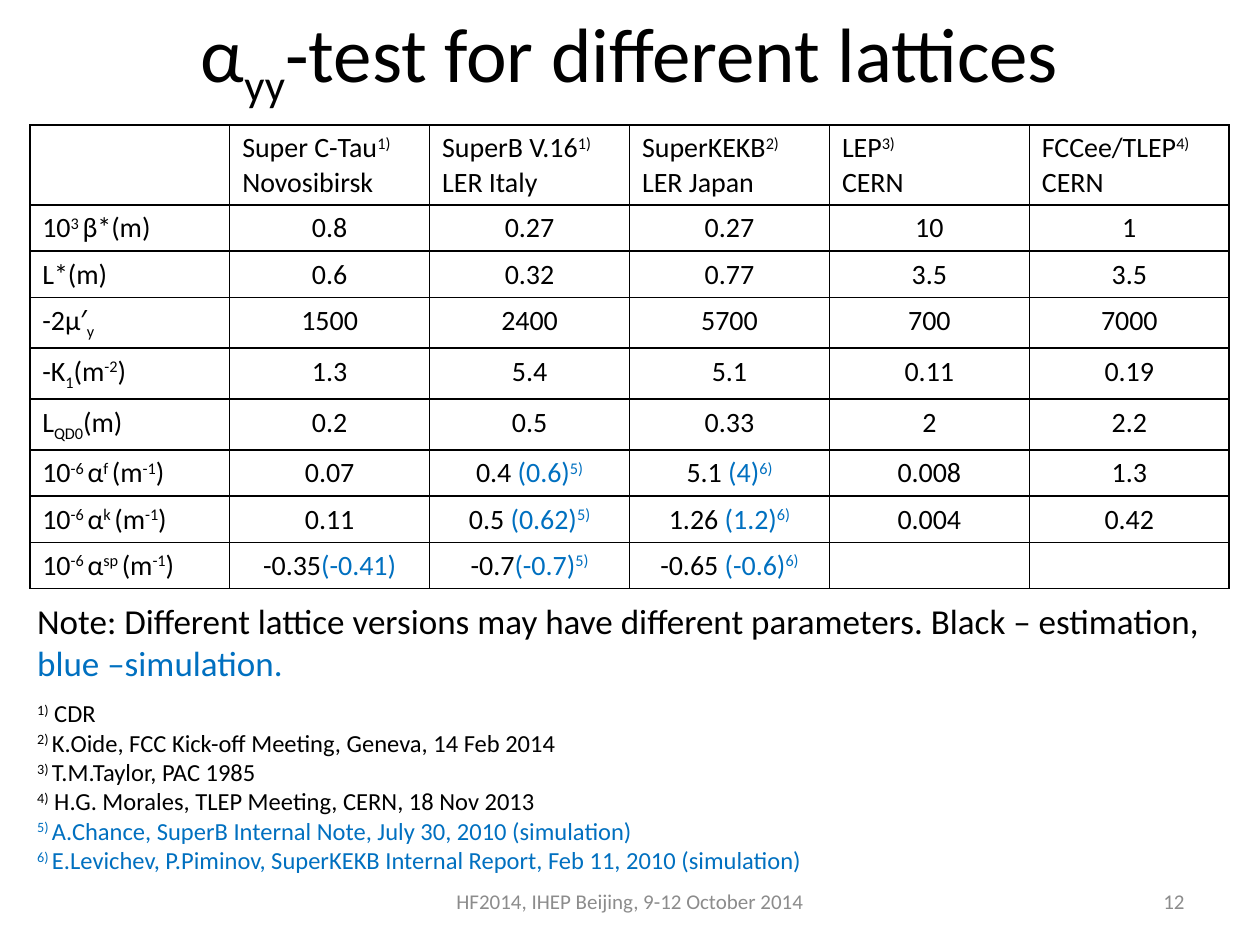
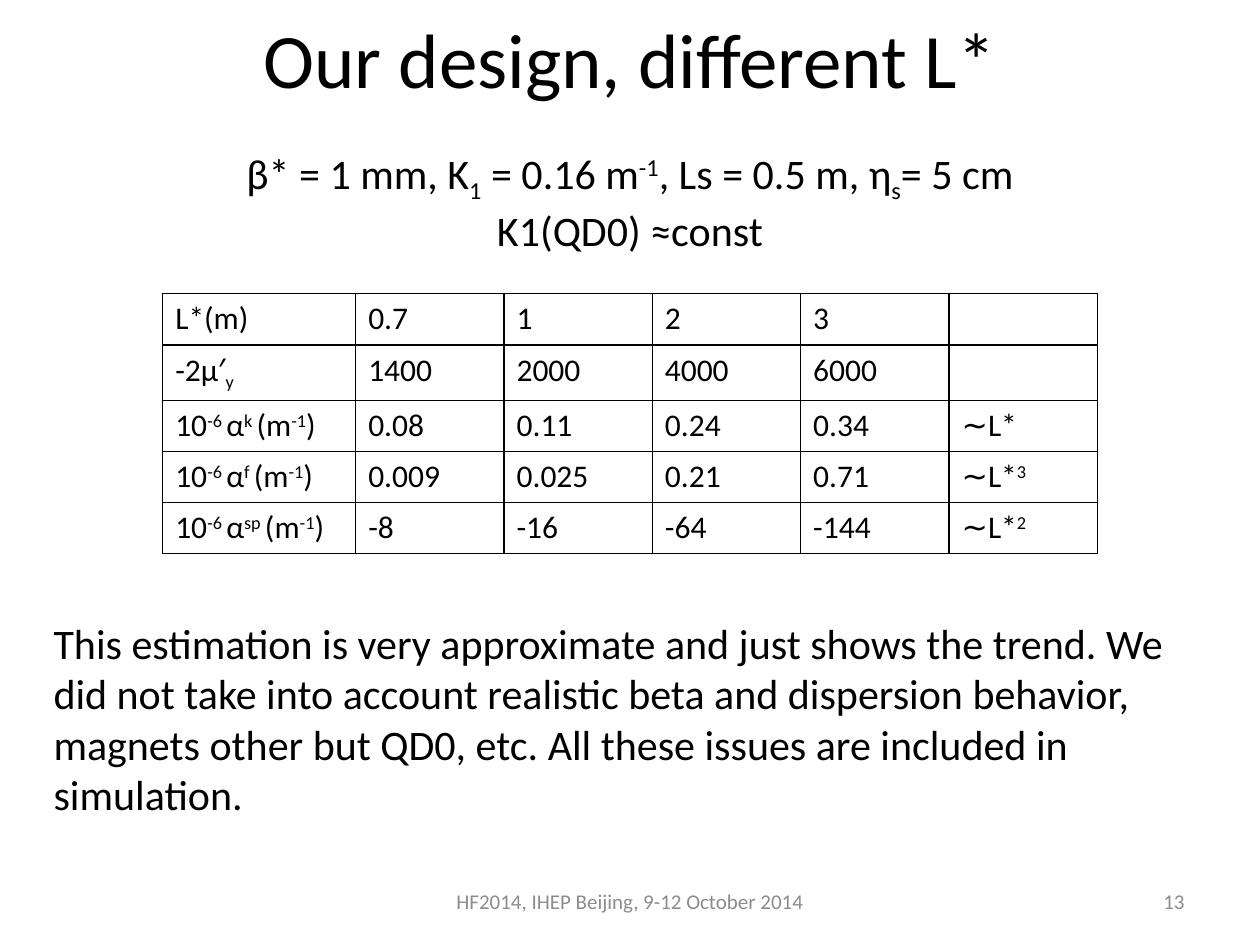
from dataclasses import dataclass

from lxml import etree
from pptx import Presentation
from pptx.dml.color import RGBColor
from pptx.enum import text
from pptx.oxml import ns
from pptx.slide import Slide
from pptx.text.text import TextFrame, _Paragraph
from pptx.util import Cm, Pt

LEFT, CENTER, RIGHT = text.PP_ALIGN.LEFT, text.PP_ALIGN.CENTER, text.PP_ALIGN.RIGHT
BASELINES = {"^": "30000", "_": "-25000"}


@dataclass(frozen=True)
class Theme:
    font: str = "Calibri"
    ink: RGBColor = RGBColor(0x00, 0x00, 0x00)
    simulation: RGBColor = RGBColor(0x00, 0x70, 0xC0)
    muted: RGBColor = RGBColor(0x8C, 0x8C, 0x8C)
    title: int = 44
    body: int = 24
    note: int = 20
    wide_cell: int = 18
    cell: int = 16
    reference: int = 14
    footer: int = 12
    border: float = 1


THEME = Theme()


@dataclass(frozen=True)
class TextBlock:
    left: float
    top: float
    width: float
    height: float
    size: int
    lines: tuple[str, ...]
    align: text.PP_ALIGN = LEFT
    color: RGBColor = THEME.ink
    anchor: text.MSO_ANCHOR = text.MSO_ANCHOR.TOP


@dataclass(frozen=True)
class Grid:
    left: float
    top: float
    widths: tuple[float, ...]
    heights: tuple[float, ...]
    size: int
    value_align: text.PP_ALIGN
    rows: tuple[tuple[str, ...], ...]


@dataclass(frozen=True)
class PageContent:
    number: int
    title: str
    blocks: tuple[TextBlock, ...]
    grid: Grid


def add_spans(para: _Paragraph, markup: str, color: RGBColor) -> None:
    """Add runs: {^up} and {_down} shift the baseline."""
    for piece in markup.split("}"):
        plain, _, shifted = piece.partition("{")
        for words, baseline in ((plain, None), (shifted[1:], BASELINES.get(shifted[:1]))):
            if words:
                span = para.add_run()
                span.text = words
                span.font.color.rgb = color
                if baseline:
                    span._r.get_or_add_rPr().set("baseline", baseline)


def write_lines(frame: TextFrame, lines: tuple[str, ...], size: int,
                align: text.PP_ALIGN, color: RGBColor = THEME.ink) -> None:
    """Write one paragraph per line; text after § is a simulation result."""
    for index, line in enumerate(lines):
        para = frame.paragraphs[0] if index == 0 else frame.add_paragraph()
        para.alignment = align
        para.font.name, para.font.size = THEME.font, Pt(size)
        estimate, _, simulated = line.partition("§")
        add_spans(para, estimate, color)
        add_spans(para, simulated, THEME.simulation)
        if not line:
            etree.SubElement(para._p, ns.qn("a:endParaRPr"), sz=str(size * 100))


def add_text(page: Slide, block: TextBlock) -> None:
    box = page.shapes.add_textbox(Cm(block.left), Cm(block.top), Cm(block.width), Cm(block.height))
    frame = box.text_frame
    frame.word_wrap = True
    frame.vertical_anchor = block.anchor
    write_lines(frame, block.lines, block.size, block.align, block.color)


def add_borders(cell) -> None:
    props = cell._tc.get_or_add_tcPr()
    for position, side in enumerate(("a:lnL", "a:lnR", "a:lnT", "a:lnB")):
        line = etree.Element(ns.qn(side), w=str(Pt(THEME.border)))
        fill = etree.SubElement(line, ns.qn("a:solidFill"))
        etree.SubElement(fill, ns.qn("a:srgbClr"), val=str(THEME.ink))
        props.insert(position, line)


def add_grid(page: Slide, grid: Grid) -> None:
    table = page.shapes.add_table(
        len(grid.heights), len(grid.widths), Cm(grid.left), Cm(grid.top),
        Cm(sum(grid.widths)), Cm(sum(grid.heights))).table
    table.first_row = table.horz_banding = False
    for column, width in zip(table.columns, grid.widths):
        column.width = Cm(width)
    for row, height in zip(table.rows, grid.heights):
        row.height = Cm(height)
    for row_index, values in enumerate(grid.rows):
        for column_index, value in enumerate(values):
            cell = table.cell(row_index, column_index)
            lines = tuple(value.split("\n"))
            is_label = column_index == 0 or len(lines) > 1
            write_lines(cell.text_frame, lines, grid.size, LEFT if is_label else grid.value_align)
            cell.fill.background()
            add_borders(cell)


def add_page(deck, content: PageContent) -> None:
    page = deck.slides.add_slide(deck.slide_layouts[6])
    middle = text.MSO_ANCHOR.MIDDLE
    title = TextBlock(1.27, 0, 22.86, 2.34, THEME.title, (content.title,), CENTER, anchor=middle)
    number = TextBlock(18.2, 17.65, 5.93, 1.02, THEME.footer, (str(content.number),),
                       RIGHT, THEME.muted, middle)
    event = TextBlock(8.68, 17.65, 8.04, 1.02, THEME.footer,
                      ("HF2014, IHEP Beijing, 9-12 October 2014",), CENTER, THEME.muted, middle)
    for block in (title, *content.blocks, number, event):
        add_text(page, block)
    add_grid(page, content.grid)


PHASE = "-2μ′{_y}"
ALPHA_F, ALPHA_K, ALPHA_SP = (f"10{{^-6 }}α{{^{kind} }}(m{{^-1}})" for kind in ("f", "k", "sp"))

LATTICES = PageContent(
    12, "α{_yy}-test for different lattices",
    (
        TextBlock(0.5, 11.96, 24.4, 1.96, THEME.note, (
            "Note: Different lattice versions may have different parameters. "
            "Black – estimation, §blue –simulation.",)),
        TextBlock(0.5, 13.95, 17.15, 3.84, THEME.reference, (
            "{^1)} CDR",
            "{^2) }K.Oide, FCC Kick-off Meeting, Geneva, 14 Feb 2014",
            "{^3) }T.M.Taylor, PAC 1985",
            "{^4)} H.G. Morales, TLEP Meeting, CERN, 18 Nov 2013",
            "§{^5) }A.Chance, SuperB Internal Note, July 30, 2010 (simulation)",
            "§{^6) }E.Levichev, P.Piminov, SuperKEKB Internal Report, Feb 11, 2010 (simulation)",
        )),
    ),
    Grid(0.6, 2.52, (4.03,) * 6, (1.61,) + (0.92,) * 8, THEME.cell, CENTER, (
        ("", "Super C-Tau{^1)}\nNovosibirsk", "SuperB V.16{^1)}\nLER Italy",
         "SuperKEKB{^2)}\nLER Japan", "LEP{^3)}\nCERN", "FCCee/TLEP{^4)}\nCERN"),
        ("10{^3 }β*(m)", "0.8", "0.27", "0.27", "10", "1"),
        ("L*(m)", "0.6", "0.32", "0.77", "3.5", "3.5"),
        (PHASE, "1500", "2400", "5700", "700", "7000"),
        ("-K{_1}(m{^-2})", "1.3", "5.4", "5.1", "0.11", "0.19"),
        ("L{_QD0}(m)", "0.2", "0.5", "0.33", "2", "2.2"),
        (ALPHA_F, "0.07", "0.4 §(0.6){^5)}", "5.1 §(4){^6)}", "0.008", "1.3"),
        (ALPHA_K, "0.11", "0.5 §(0.62){^5)}", "1.26 §(1.2){^6)}", "0.004", "0.42"),
        (ALPHA_SP, "-0.35§(-0.41)", "-0.7§(-0.7){^5)}", "-0.65 §(-0.6){^6)}", "", ""),
    )),
)

DESIGN = PageContent(
    13, "Our design, different L*",
    (
        TextBlock(4.2, 2.84, 17, 2.31, THEME.body, (
            "β* = 1 mm, K{_1} = 0.16 m{^-1}, Ls = 0.5 m, η{_s}= 5 cm",
            "K1(QD0) ≈const"), CENTER),
        TextBlock(0.83, 12.32, 23.8, 4.37, THEME.body, (
            "This estimation is very approximate and just shows the trend. We did not take "
            "into account realistic beta and dispersion behavior, magnets other but QD0, etc. "
            "All these issues are included in simulation.",)),
    ),
    Grid(3.28, 5.92, (3.89,) + (2.99,) * 5, (1.03,) * 5, THEME.wide_cell, LEFT, (
        ("L*(m)", "0.7", "1", "2", "3", ""),
        (PHASE, "1400", "2000", "4000", "6000", ""),
        (ALPHA_K, "0.08", "0.11", "0.24", "0.34", "∼L*"),
        (ALPHA_F, "0.009", "0.025", "0.21", "0.71", "∼L*{^3}"),
        (ALPHA_SP, "-8", "-16", "-64", "-144", "∼L*{^2}"),
    )),
)


def main() -> None:
    deck = Presentation()
    deck.slide_width, deck.slide_height = Cm(25.4), Cm(19.05)
    for content in (LATTICES, DESIGN):
        add_page(deck, content)
    deck.save("out.pptx")


if __name__ == "__main__":
    main()
